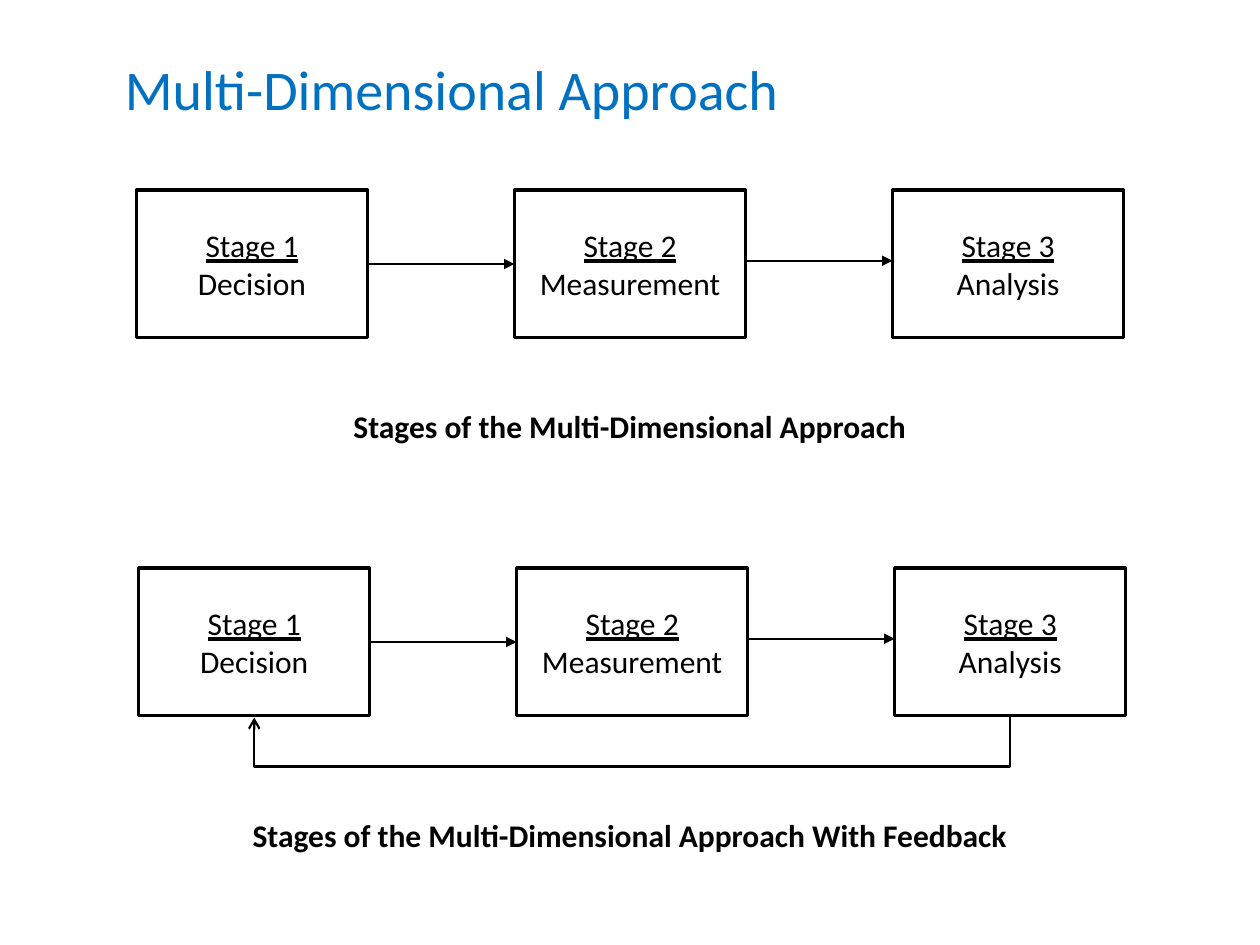
from lxml import etree
from pptx import Presentation
from pptx.dml.color import RGBColor
from pptx.enum import shapes, text
from pptx.oxml import ns
from pptx.util import Pt

COLOURS = {"ink": "000000", "title": "0070C0"}
STAGES = [("Stage 1", "Decision"), ("Stage 2", "Measurement"), ("Stage 3", "Analysis")]
BOX_WIDTH, BOX_HEIGHT, PITCH = 132, 84.25, 216
SECOND_ARROW_DROP = 40.25
FEEDBACK_DEPTH = 29.25


class SlideBuilder:
    """Holds the style and the current slide, and draws each kind of element."""

    def __init__(self, page):
        self.page = page
        self.font = "Calibri"

    def add_span(self, para, words, size=18, colour="ink", **formats):
        span = para.add_run()
        span.text = words
        for name, value in {"name": self.font, "size": Pt(size), **formats}.items():
            setattr(span.font, name, value)
        span.font.color.rgb = RGBColor.from_string(COLOURS[colour])

    def label(self, words, left, top, width, height, align=text.PP_ALIGN.CENTER, **formats):
        box = self.page.shapes.add_textbox(Pt(left), Pt(top), Pt(width), Pt(height))
        frame = box.text_frame
        frame.word_wrap = False
        frame.auto_size = text.MSO_AUTO_SIZE.SHAPE_TO_FIT_TEXT
        frame.paragraphs[0].alignment = align
        self.add_span(frame.paragraphs[0], words, **formats)

    def stage(self, heading, activity, left, top):
        box = self.page.shapes.add_shape(
            shapes.MSO_SHAPE.RECTANGLE, Pt(left), Pt(top), Pt(BOX_WIDTH), Pt(BOX_HEIGHT))
        box.shadow.inherit = False
        box.fill.background()
        box.line.width = Pt(2)
        box.line.color.rgb = RGBColor.from_string(COLOURS["ink"])
        frame = box.text_frame
        frame.word_wrap = True
        frame.vertical_anchor = text.MSO_ANCHOR.MIDDLE
        for para, words, underline in ((frame.paragraphs[0], heading, True),
                                       (frame.add_paragraph(), activity, False)):
            para.alignment = text.PP_ALIGN.CENTER
            self.add_span(para, words, underline=underline)
        return box

    def arrow(self, start, end, head="triangle", kind=shapes.MSO_CONNECTOR.STRAIGHT):
        connector = self.page.shapes.add_connector(kind, *map(Pt, (*start, *end)))
        connector.line.width = Pt(1.25)
        connector.line.color.rgb = RGBColor.from_string(COLOURS["ink"])
        properties = connector._element.spPr
        etree.SubElement(properties.get_or_add_ln(), ns.qn("a:tailEnd"), type=head)
        etree.SubElement(properties, ns.qn("a:effectLst"))
        return connector

    def feedback(self, centre, bottom):
        start = centre - 0.5, bottom + 0.5 - PITCH
        end = centre + 0.5, bottom + 0.5 + PITCH
        elbow = self.arrow(start, end, "arrow", shapes.MSO_CONNECTOR.ELBOW)
        properties = elbow._element.spPr
        properties.find(ns.qn("a:xfrm")).set("rot", str(90 * 60000))
        geometry = properties.find(ns.qn("a:prstGeom"))
        guides = geometry.find(ns.qn("a:avLst"))
        if guides is None:
            guides = etree.SubElement(geometry, ns.qn("a:avLst"))
        etree.SubElement(guides, ns.qn("a:gd"), name="adj1",
                         fmla=f"val {int(FEEDBACK_DEPTH * 100000)}")

    def flow(self, left, top):
        boxes = [self.stage(*stage, left + column * PITCH, top)
                 for column, stage in enumerate(STAGES)]
        middle = top + BOX_HEIGHT / 2
        joined = self.arrow((left + BOX_WIDTH, middle), (left + PITCH, middle))
        joined.begin_connect(boxes[0], 3)
        joined.end_connect(boxes[1], 1)
        level = top + SECOND_ARROW_DROP
        self.arrow((left + PITCH + BOX_WIDTH, level), (left + 2 * PITCH, level))


def main():
    deck = Presentation()
    deck.slide_width, deck.slide_height = Pt(720), Pt(540)
    builder = SlideBuilder(deck.slides.add_slide(deck.slide_layouts[6]))
    builder.label("Multi-Dimensional Approach", 64.25, 27.5, 392.5, 46,
                  align=text.PP_ALIGN.LEFT, size=32, colour="title")
    builder.flow(78, 108.75)
    builder.label("Stages of the Multi-Dimensional Approach", 193.5, 229, 333, 29, bold=True)
    left, top = 79.25, 324.75
    builder.flow(left, top)
    builder.feedback(left + PITCH + BOX_WIDTH / 2, top + BOX_HEIGHT)
    builder.label("Stages of the Multi-Dimensional Approach With Feedback",
                  135.25, 463, 449.5, 29, bold=True)
    deck.save("out.pptx")


if __name__ == "__main__":
    main()
